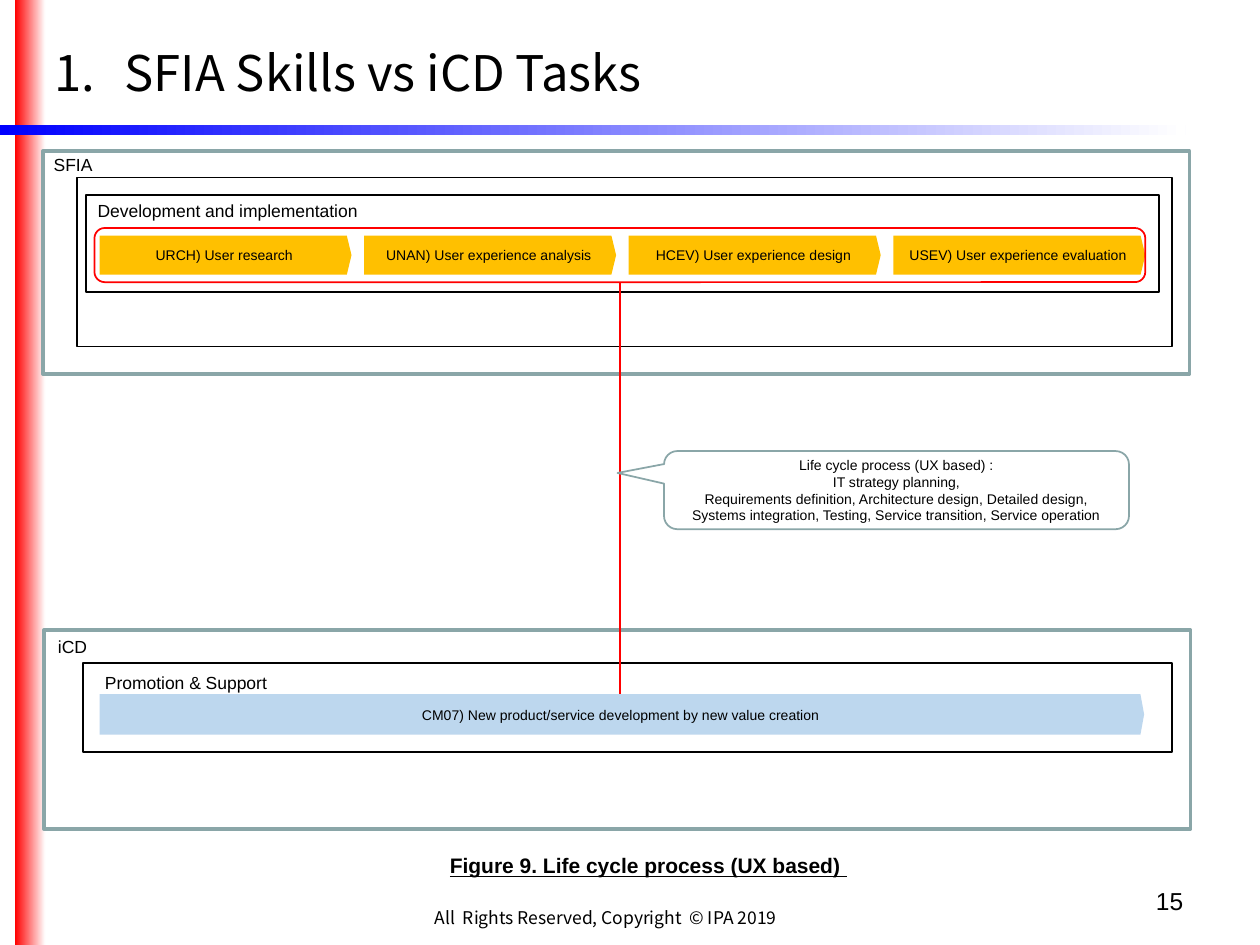
from lxml.etree import SubElement
from pptx import Presentation
from pptx.dml.color import RGBColor
from pptx.enum.shapes import MSO_CONNECTOR, MSO_SHAPE as SHAPE
from pptx.enum.text import MSO_ANCHOR as ANCHOR, MSO_AUTO_SIZE, PP_ALIGN as ALIGN
from pptx.oxml.ns import qn
from pptx.util import Inches, Pt

BLACK = RGBColor(0x00, 0x00, 0x00)
WHITE = RGBColor(0xFF, 0xFF, 0xFF)
RED = RGBColor(0xFF, 0x00, 0x00)
BLUE = RGBColor(0x00, 0x00, 0xFF)
GREY = RGBColor(0x8A, 0xA6, 0xA8)
AMBER = RGBColor(0xFF, 0xC0, 0x00)
PALE_BLUE = RGBColor(0xBD, 0xD7, 0xEE)
SANS, CJK = "Arial", "Noto Sans CJK JP"

TITLE = "SFIA Skills vs iCD Tasks"
BARS = [((0.12, 0, 0.24, 7.5), RED), ((0, 0.99, 9.41, 0.08), BLUE)]
FRAMES = [  # box, line colour, line width
    ((0.34, 1.2, 9.1, 1.77), GREY, 2),
    ((0.35, 5, 9.1, 1.58), GREY, 2),
    ((0.66, 5.26, 8.64, 0.71), BLACK, 1),
    ((0.61, 1.41, 8.69, 1.34), BLACK, 1),
    ((0.68, 1.55, 8.52, 0.77), BLACK, 1),
]
LABELS = [  # text, box, format
    ("SFIA", (0.23, 1.17, 0.7, 0.27), {}),
    ("iCD", (0.27, 5, 0.61, 0.27), {}),
    ("Development and implementation", (0.65, 1.52, 2.31, 0.3), {"anchor": ANCHOR.MIDDLE}),
    ("Promotion & Support", (0.7, 5.33, 1.55, 0.17), {"anchor": ANCHOR.MIDDLE}),
    ("Figure 9. Life cycle process (UX based) ", (1.78, 6.72, 6.73, 0.3),
     {"size": 12, "bold": True, "underline": True}),
    ("All  Rights Reserved, Copyright  © IPA 2019", (2.93, 7.15, 3.75, 0.31), {"font": CJK}),
    ("15", (9.06, 6.98, 0.43, 0.31), {"size": 14, "align": ALIGN.RIGHT}),
]
SKILLS = ["URCH) User research", "UNAN) User experience analysis",
          "HCEV) User experience design", "USEV) User experience evaluation"]
SKILL_LEFT, SKILL_TOP, SKILL_W, SKILL_H, SKILL_STEP = 0.79, 1.87, 2, 0.31, 2.1
TASK = "CM07) New product/service development by new value creation"
TASK_BOX = (SKILL_LEFT, 5.51, 8.29, 0.32)
SKILL_GROUP = (0.75, 1.81, 8.34, 0.43)
CALLOUT = ["Life cycle process (UX based) :\nIT strategy planning,",
           "Requirements definition, Architecture design, Detailed design, "
           "Systems integration, Testing, Service transition, Service operation"]


def inches(box):
    return [Inches(v) for v in box]


def write(sp, *paragraphs, size=10, font=SANS, align=ALIGN.CENTER, anchor=ANCHOR.TOP,
          bold=None, underline=None, wrap=True, inset=0.1):
    tf = sp.text_frame
    tf.word_wrap, tf.auto_size, tf.vertical_anchor = wrap, MSO_AUTO_SIZE.NONE, anchor
    tf.margin_left = tf.margin_right = Inches(inset)
    for i, text in enumerate(paragraphs):
        p = tf.add_paragraph() if i else tf.paragraphs[0]
        p.text, p.alignment = text, align
        for r in p.runs:
            f = r.font
            f.size, f.name, f.bold, f.underline = Pt(size), font, bold, underline
            f.color.rgb = BLACK


def add_shape(s, kind, box, fill=None, line=None, width=1, adjust=()):
    sp = s.shapes.add_shape(kind, *inches(box))
    sp.shadow.inherit = False
    for i, value in enumerate(adjust):
        sp.adjustments[i] = value
    if fill is None:
        sp.fill.background()
    else:
        sp.fill.solid()
        sp.fill.fore_color.rgb = fill
    if line is None:
        sp.line.fill.background()
    else:
        sp.line.color.rgb, sp.line.width = line, Pt(width)
    return sp


def add_fading_bar(s, box, color):
    fill = add_shape(s, SHAPE.RECTANGLE, box).fill
    fill.gradient()
    fill.gradient_angle = 0
    for stop, rgb in zip(fill.gradient_stops, (color, WHITE)):
        stop.color.rgb = rgb
    fill.gradient_stops[0].position, fill.gradient_stops[1].position = 0, 1


def add_title(s):
    title = s.shapes.title
    title.left, title.top, title.width, title.height = inches((0.33, 0.29, 5.28, 0.57))
    p = title.text_frame.paragraphs[0]
    pPr = p._p.get_or_add_pPr()
    pPr.set("marL", str(Inches(0.56)))
    pPr.set("indent", str(-Inches(0.56)))
    SubElement(pPr, qn("a:buFont"), typeface=CJK)
    SubElement(pPr, qn("a:buAutoNum"), type="arabicPeriod")
    write(title, TITLE, size=28, font=CJK, align=ALIGN.LEFT, wrap=False)
    p.line_spacing = 1.0


def add_pentagon(s, text, box, fill, point):
    sp = add_shape(s, SHAPE.PENTAGON, box, fill=fill, adjust=[point])
    write(sp, text, size=8, anchor=ANCHOR.MIDDLE, inset=0.02)


def add_link(s, x, top, bottom):
    link = s.shapes.add_connector(MSO_CONNECTOR.STRAIGHT, *inches((x, top, x, bottom)))
    link.line.color.rgb, link.line.width = RED, Pt(0.75)
    SubElement(link._element.spPr, qn("a:effectLst"))


def main():
    prs = Presentation()
    prs.slide_width, prs.slide_height = Inches(10), Inches(7.5)
    s = prs.slides.add_slide(prs.slide_layouts[5])
    for box, color in BARS:
        add_fading_bar(s, box, color)
    add_title(s)
    for box, color, width in FRAMES:
        add_shape(s, SHAPE.RECTANGLE, box, line=color, width=width)
    for text, box, style in LABELS:
        write(s.shapes.add_textbox(*inches(box)), text, **style)
    for i, skill in enumerate(SKILLS):
        box = (SKILL_LEFT + i * SKILL_STEP, SKILL_TOP, SKILL_W, SKILL_H)
        add_pentagon(s, skill, box, AMBER, 0.12)
    add_pentagon(s, TASK, TASK_BOX, PALE_BLUE, 0.09)
    left, top, width, height = SKILL_GROUP
    add_link(s, left + width / 2, top + height, TASK_BOX[1])
    add_shape(s, SHAPE.ROUNDED_RECTANGLE, SKILL_GROUP, line=RED, adjust=[0.19])
    callout = add_shape(s, SHAPE.ROUNDED_RECTANGULAR_CALLOUT, (5.27, 3.58, 3.69, 0.62),
                        line=GREY, adjust=[-0.6, -0.22, 0.17])
    write(callout, *CALLOUT, size=8, anchor=ANCHOR.MIDDLE)
    prs.save("out.pptx")


if __name__ == "__main__":
    main()
